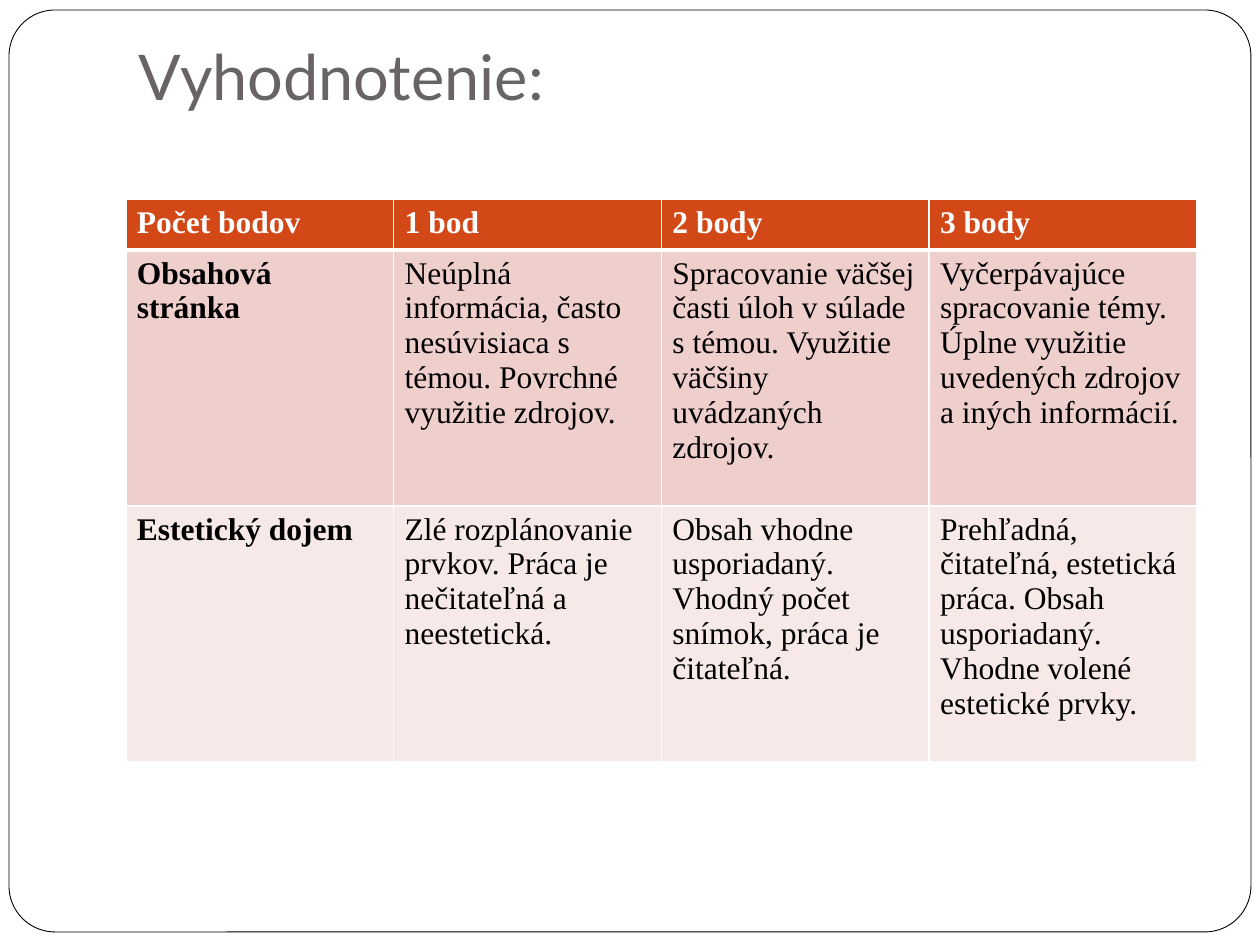
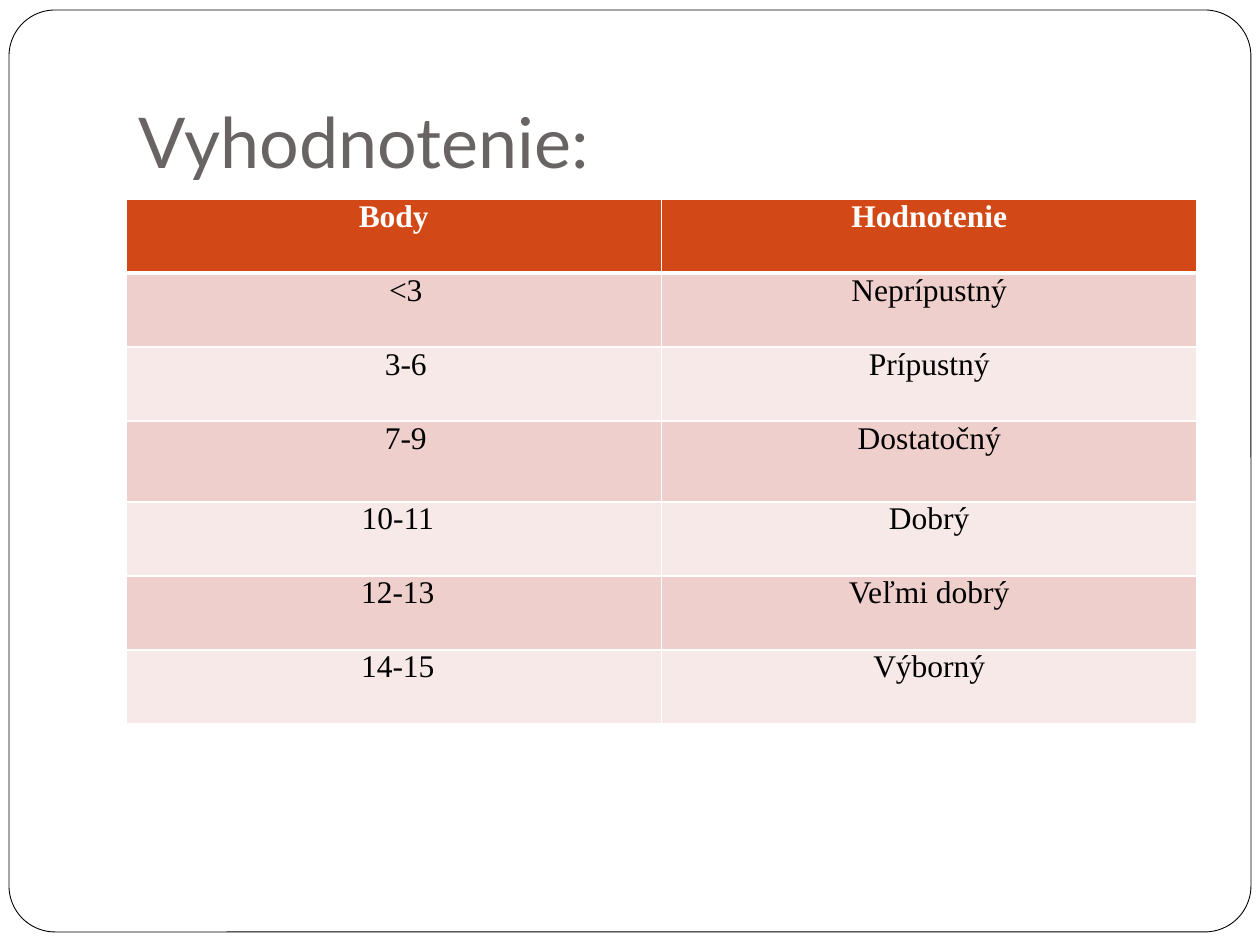
from lxml.etree import SubElement
from pptx import Presentation
from pptx.dml.color import RGBColor
from pptx.enum.shapes import MSO_SHAPE
from pptx.enum.text import MSO_ANCHOR, PP_ALIGN
from pptx.oxml.ns import qn
from pptx.util import Emu, Pt

WHITE = RGBColor(0xFF, 0xFF, 0xFF)
BLACK = RGBColor(0x00, 0x00, 0x00)
TITLE_GREY = RGBColor(0x69, 0x64, 0x64)
HEADER_ORANGE = RGBColor(0xD3, 0x48, 0x17)
BANDS = (RGBColor(0xEF, 0xCF, 0xCC), RGBColor(0xF7, 0xE9, 0xE8))

TITLE_FONT = "Lato"
TABLE_FONT = "Times New Roman"
TABLE_LEFT, TABLE_TOP, TABLE_WIDTH = 126, 199, 1071

CRITERIA = [
    ("Počet bodov", "1 bod", "2 body", "3 body"),
    (
        "Obsahová stránka",
        "Neúplná informácia, často nesúvisiaca s témou. Povrchné využitie zdrojov.",
        "Spracovanie väčšej časti úloh v súlade s témou. Využitie väčšiny uvádzaných zdrojov.",
        "Vyčerpávajúce spracovanie témy. Úplne využitie uvedených zdrojov a iných informácií.",
    ),
    (
        "Estetický dojem",
        "Zlé rozplánovanie prvkov. Práca je nečitateľná a neestetická.",
        "Obsah vhodne usporiadaný. Vhodný počet snímok, práca je čitateľná.",
        "Prehľadná, čitateľná, estetická práca. Obsah usporiadaný. Vhodne volené estetické prvky.",
    ),
]
GRADES = [
    ("Body", "Hodnotenie"),
    ("<3", "Neprípustný"),
    ("3-6", "Prípustný"),
    ("7-9", "Dostatočný"),
    ("10-11", "Dobrý"),
    ("12-13", "Veľmi dobrý"),
    ("14-15", "Výborný"),
]
GRADE_INDENTS = (0, 24, 24, 24, 8, 8, 8)


def px(length):
    """Turn whole pixels, 126 to the inch, into EMU."""
    return Emu(round(length * 914400 / 126))


def add_run(paragraph, text, font, size, color, bold=False):
    """Append one formatted run to a paragraph."""
    run = paragraph.add_run()
    run.text = text
    run.font.name = font
    run.font.size = Pt(size)
    run.font.bold = bold
    run.font.color.rgb = color


def set_margins(holder, left, top, right, bottom):
    """Set the inner margins of a cell or a text frame."""
    holder.margin_left, holder.margin_top = px(left), px(top)
    holder.margin_right, holder.margin_bottom = px(right), px(bottom)


def add_frame(slide):
    """Draw the rounded outline around the slide."""
    frame = slide.shapes.add_shape(
        MSO_SHAPE.ROUNDED_RECTANGLE, px(9), px(10), px(1242), px(922)
    )
    frame.adjustments[0] = 0.05
    frame.shadow.inherit = False
    frame.fill.solid()
    frame.fill.fore_color.rgb = WHITE
    frame.line.color.rgb = BLACK
    frame.line.width = Pt(0.5)


def add_title(slide, text, size, space_below):
    """Write the slide title, anchored above the given space."""
    title = slide.shapes.add_textbox(px(126), px(38), px(1071), px(157)).text_frame
    title.word_wrap = True
    title.vertical_anchor = MSO_ANCHOR.BOTTOM
    set_margins(title, 13, 0, 13, space_below)
    add_run(title.paragraphs[0], text, TITLE_FONT, size, TITLE_GREY)


def add_borders(cell, top, bottom):
    """Give a cell white borders, with top and bottom widths in points."""
    properties = cell._tc.get_or_add_tcPr()
    for side, width in (("L", 1), ("R", 1), ("T", top), ("B", bottom)):
        line = SubElement(properties, qn(f"a:ln{side}"), w=str(Pt(width)))
        fill = SubElement(line, qn("a:solidFill"))
        SubElement(fill, qn("a:srgbClr"), val=str(WHITE))


def add_score_table(slide, rows, heights, margins, align, bold_labels, indents):
    """Build a banded table with an orange header and equal columns."""
    columns = len(rows[0])
    table = slide.shapes.add_table(
        len(rows), columns, px(TABLE_LEFT), px(TABLE_TOP),
        px(TABLE_WIDTH), px(sum(heights)),
    ).table
    for column in table.columns:
        column.width = px(TABLE_WIDTH / columns)
    side, edge = margins
    for r, texts in enumerate(rows):
        table.rows[r].height = px(heights[r])
        header = r == 0
        for c, text in enumerate(texts):
            label = c == 0
            cell = table.cell(r, c)
            set_margins(cell, side + (indents[r] if label else 0), edge, side, edge)
            add_borders(cell, 3 if r == 1 else 1, 3 if header else 1)
            cell.fill.solid()
            cell.fill.fore_color.rgb = HEADER_ORANGE if header else BANDS[(r - 1) % 2]
            paragraph = cell.text_frame.paragraphs[0]
            paragraph.alignment = align
            add_run(paragraph, text, TABLE_FONT, 18, WHITE if header else BLACK,
                    header or (label and bold_labels))


def add_evaluation_slide(deck, title_size, space_below, **score_table):
    """Add one evaluation slide with its frame, title and table."""
    slide = deck.slides.add_slide(deck.slide_layouts[6])
    add_frame(slide)
    add_title(slide, "Vyhodnotenie:", title_size, space_below)
    add_score_table(slide, **score_table)


def main():
    """Build and save the two evaluation slides."""
    deck = Presentation()
    deck.slide_width, deck.slide_height = px(1260), px(945)
    add_evaluation_slide(
        deck, 36, 89, rows=CRITERIA, heights=(51, 256, 256), margins=(11, 6),
        align=PP_ALIGN.LEFT, bold_labels=True, indents=(0, 0, 0),
    )
    add_evaluation_slide(
        deck, 40, 13, rows=GRADES, heights=(74, 74, 74, 81, 74, 74, 74),
        margins=(9, 0), align=PP_ALIGN.CENTER, bold_labels=False,
        indents=GRADE_INDENTS,
    )
    deck.save("out.pptx")


if __name__ == "__main__":
    main()
